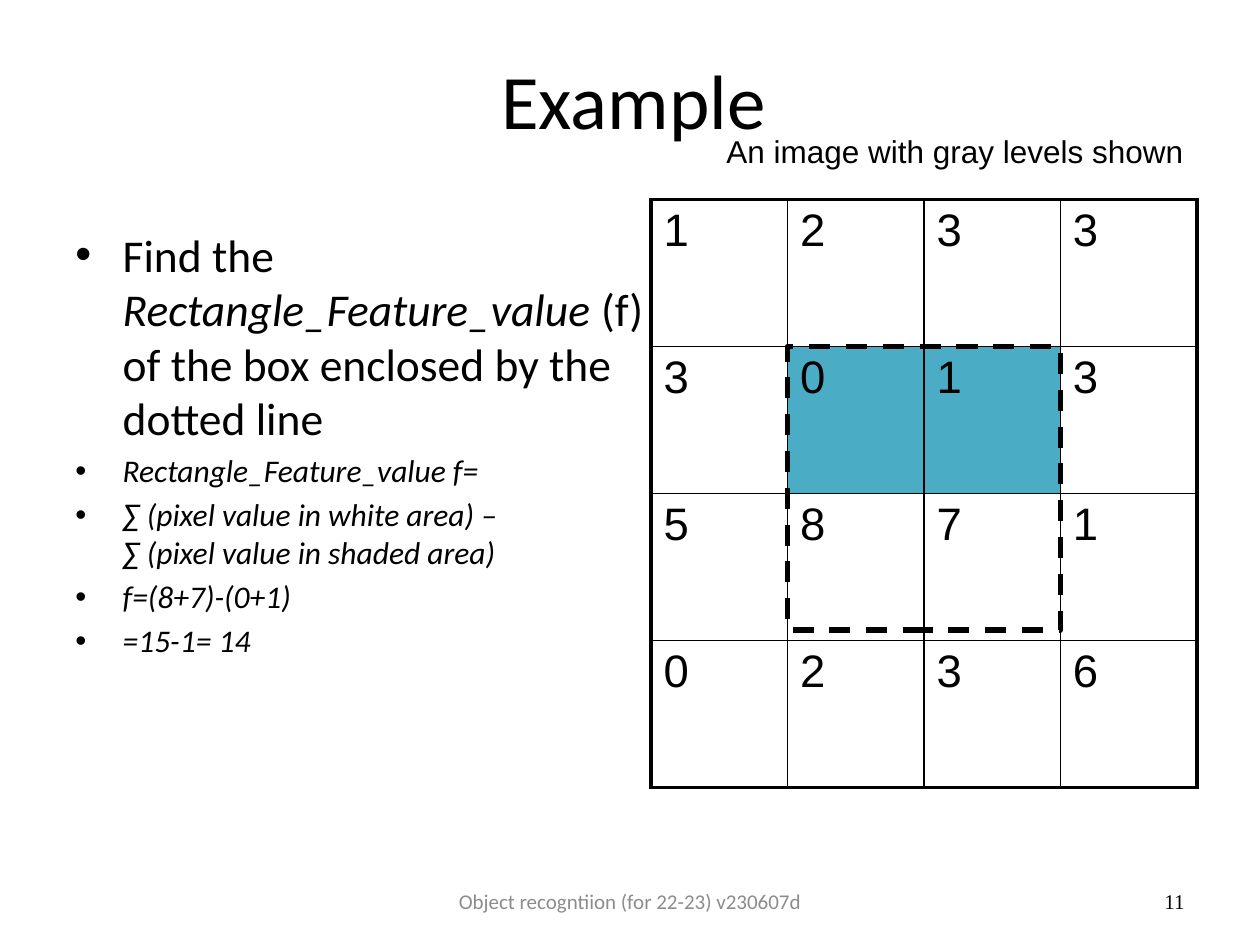
from lxml.etree import SubElement
from pptx import Presentation
from pptx.dml.color import RGBColor
from pptx.enum.dml import MSO_LINE
from pptx.enum.shapes import MSO_SHAPE
from pptx.enum.text import MSO_ANCHOR, MSO_AUTO_SIZE, PP_ALIGN
from pptx.oxml.ns import qn
from pptx.util import Pt

COLORS = {"black": "000000", "white": "FFFFFF", "shaded": "4BACC6", "footer": "8C8C8C"}


def style_run(r, size, font="Calibri", color="black", italic=False):
    r.font.size = Pt(size)
    r.font.name = font
    r.font.italic = italic
    r.font.color.rgb = RGBColor.from_string(COLORS[color])


def add_label(left, top, width, height, text, size, font, color, align):
    tf = s.shapes.add_textbox(Pt(left), Pt(top), Pt(width), Pt(height)).text_frame
    tf.word_wrap = True
    tf.vertical_anchor = MSO_ANCHOR.MIDDLE
    p = tf.paragraphs[0]
    p.text = text
    p.alignment = align
    style_run(p.runs[0], size, font, color)
    return tf


prs = Presentation()
prs.slide_width, prs.slide_height = Pt(720), Pt(540)
s = prs.slides.add_slide(prs.slide_layouts[5])

# Title
title = s.shapes.title
title.left, title.top, title.width, title.height = Pt(38), Pt(11.5), Pt(648), Pt(90)
title.text_frame.text = "Example"
title.text_frame.vertical_anchor = MSO_ANCHOR.MIDDLE
p = title.text_frame.paragraphs[0]
p.alignment = PP_ALIGN.CENTER
style_run(p.runs[0], 44)

# Bulleted text: each paragraph is a size and its (text, italic) runs
bullets = [
    (26, [("Find the ", False), ("Rectangle_Feature_value", True),
          (" (f) of the box enclosed by the dotted line", False)]),
    (18, [("Rectangle_Feature_value f=", True)]),
    (18, [("∑ (pixel value in white area) – \v∑ (pixel value in shaded area)", True)]),
    (18, [("f=(8+7)-(0+1)", True)]),
    (18, [("=15-1= 14", True)]),
]
tf = s.shapes.add_textbox(Pt(36), Pt(126), Pt(342), Pt(356)).text_frame
tf.word_wrap = True
for i, (size, parts) in enumerate(bullets):
    p = tf.paragraphs[0] if i == 0 else tf.add_paragraph()
    p.space_before = Pt(size * 0.2)
    if len(parts) == 1:
        p.text = parts[0][0]
    else:
        for text, _ in parts:
            p.add_run().text = text
    for k, r in enumerate(p.runs):
        style_run(r, size, italic=parts[min(k, len(parts) - 1)][1])
    pPr = p._p.get_or_add_pPr()
    pPr.set("marL", str(Pt(27)))
    pPr.set("indent", str(Pt(-27)))
    SubElement(pPr, qn("a:buFont"), typeface="Arial")
    SubElement(pPr, qn("a:buChar"), char="•")

# Table of gray levels
levels = [[1, 2, 3, 3], [3, 0, 1, 3], [5, 8, 7, 1], [0, 2, 3, 6]]
n = len(levels)
frame = s.shapes.add_table(n, n, Pt(372), Pt(114), Pt(312), Pt(336))
table = frame.table
table.first_row = table.horz_banding = False
for i in range(n):
    table.columns[i].width = Pt(78)
    table.rows[i].height = Pt(84)
for row, values in enumerate(levels):
    for col, value in enumerate(values):
        cell = table.cell(row, col)
        shaded = row == 1 and col in (1, 2)
        cell.fill.solid()
        cell.fill.fore_color.rgb = RGBColor.from_string(COLORS["shaded" if shaded else "white"])
        p = cell.text_frame.paragraphs[0]
        p.text = str(value)
        p.space_before = Pt(5.2)
        style_run(p.runs[0], 26, "Arial")
        # Thick outer border, thin inner lines; borders precede the fill
        tcPr = cell._tc.get_or_add_tcPr()
        outer = {"lnL": col == 0, "lnR": col == n - 1, "lnT": row == 0, "lnB": row == n - 1}
        for k, (tag, thick) in enumerate(outer.items()):
            ln = SubElement(tcPr, qn(f"a:{tag}"), w=str(Pt(2.25 if thick else 1)))
            SubElement(SubElement(ln, qn("a:solidFill")), qn("a:srgbClr"), val=COLORS["black"])
            tcPr.insert(k, ln)

# Footer and slide number
add_label(246, 500.5, 228, 28.75, "Object recogntiion (for 22-23) v230607d",
          12, "Calibri", "footer", PP_ALIGN.CENTER)
add_label(516, 500.5, 168, 28.75, "11", 12, "Times New Roman", "black", PP_ALIGN.RIGHT)

# Dashed box around the feature
box = s.shapes.add_shape(MSO_SHAPE.RECTANGLE, Pt(450), Pt(198), Pt(156), Pt(162))
box.shadow.inherit = False
box.fill.background()
box.line.color.rgb = RGBColor.from_string(COLORS["black"])
box.line.width = Pt(3)
box.line.dash_style = MSO_LINE.DASH

# Table caption
tf = add_label(408, 72, 278, 29, "An image with gray levels shown",
               18, "Arial", "black", PP_ALIGN.LEFT)
tf.vertical_anchor = MSO_ANCHOR.TOP
tf.word_wrap = False
tf.auto_size = MSO_AUTO_SIZE.SHAPE_TO_FIT_TEXT

prs.save("out.pptx")
